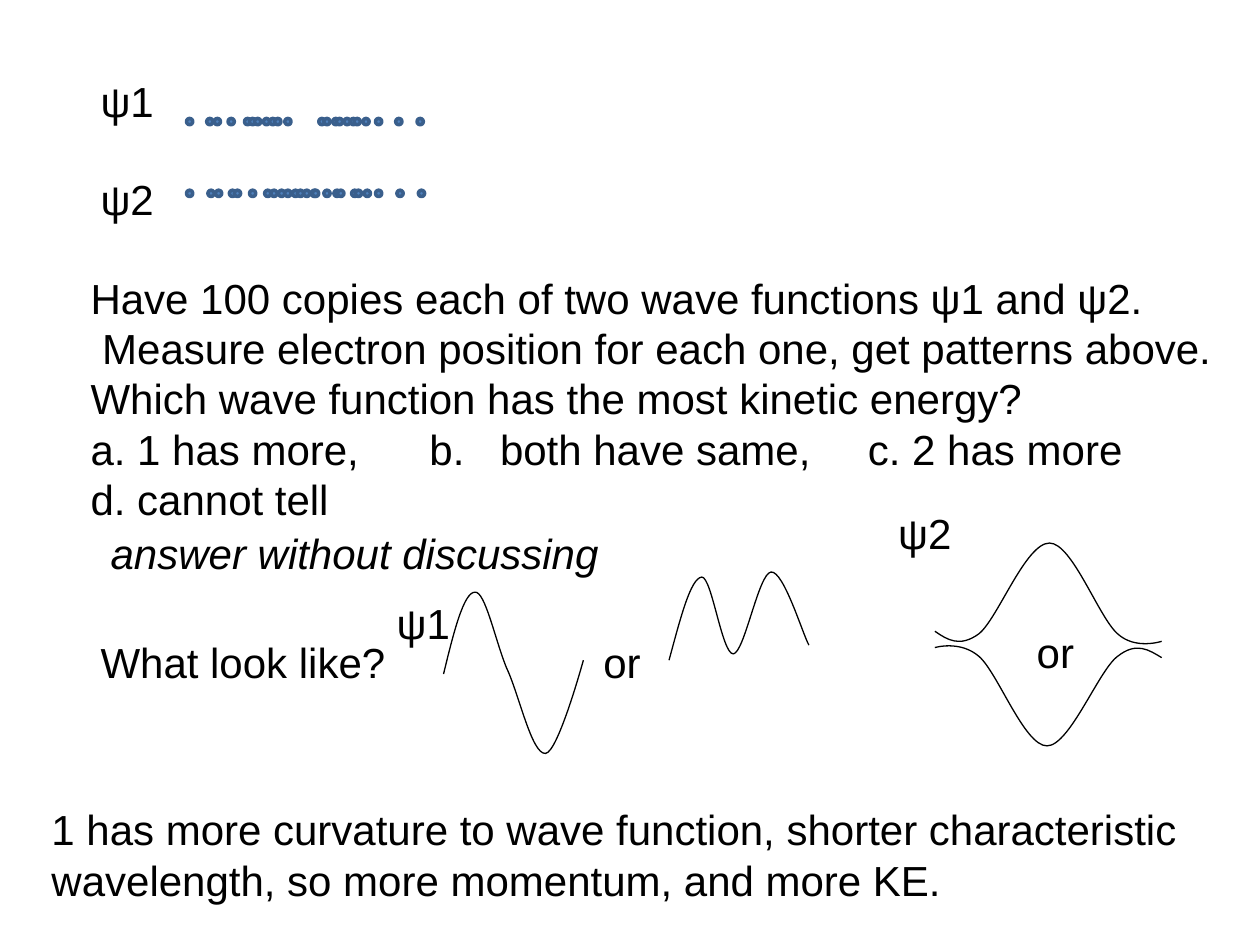
from lxml import etree
from pptx import Presentation
from pptx.dml.color import RGBColor
from pptx.enum import shapes, text
from pptx.oxml.ns import qn
from pptx.util import Inches, Pt

BLACK = RGBColor(0x00, 0x00, 0x00)
DOT_FILL = RGBColor(0x4F, 0x81, 0xBD)
DOT_LINE = RGBColor(0x3A, 0x5F, 0x8C)
DOT_SIZE = 0.05

# Text blocks: left, top, width, height, lines, italic
QUESTION = [
    "Have 100 copies each of two wave functions ψ1 and ψ2.",
    " Measure electron position for each one, get patterns above.",
    "Which wave function has the most kinetic energy?",
    "a. 1 has more,\tb.\tboth have same,\tc. 2 has more",
    "d. cannot tell",
]
ANSWER_TABS = [2.69, 3.25, 6.17]
EXPLANATION = [
    "1 has more curvature to wave function, shorter characteristic",
    "wavelength, so more momentum, and more KE.",
]
BLOCKS = [
    (0.7, 0.55, 0.64, 0.5, ["ψ1"], False),
    (0.7, 1.33, 0.64, 0.5, ["ψ2"], False),
    (0.62, 2.11, 9.11, 2.12, QUESTION, False),
    (0.7, 5, 2.67, 0.5, ["What look like?"], False),
    (0.78, 4.14, 4.12, 0.5, ["answer without discussing"], True),
    (0.31, 6.33, 9.22, 0.91, EXPLANATION, False),
]

# Measured electron positions: row top -> left edges
PATTERNS = {
    0.94: [1.48, 1.64, 1.7, 1.81, 1.94, 1.98, 2.02, 2.09, 2.14, 2.18, 2.26,
           2.53, 2.57, 2.64, 2.67, 2.73, 2.78, 2.81, 2.88, 2.98, 3.14, 3.31],
    1.51: [1.48, 1.65, 1.71, 1.82, 1.86, 1.98, 2.1, 2.15, 2.21, 2.26, 2.32, 2.36,
           2.41, 2.47, 2.48, 2.57, 2.65, 2.68, 2.79, 2.82, 2.89, 2.98, 3.15, 3.32],
}

# Candidate wave functions: a start point, then three Bézier points per segment
PSI1 = {
    "curves": [
        [(3.52, 5.35), (3.6, 5.02), (3.68, 4.7), (3.77, 4.7),
         (3.85, 4.69), (3.93, 5.08), (4.02, 5.3),
         (4.12, 5.51), (4.22, 5.99), (4.33, 5.98),
         (4.43, 5.97), (4.63, 5.24), (4.63, 5.24)],
        [(5.31, 5.24), (5.4, 4.91), (5.48, 4.59), (5.57, 4.58),
         (5.65, 4.58), (5.73, 5.19), (5.82, 5.19),
         (5.91, 5.18), (6.02, 4.55), (6.12, 4.54),
         (6.22, 4.53), (6.37, 5.03), (6.42, 5.12)],
    ],
    "labels": [(4.69, 5, 0.5, 0.5, ["or"], False),
               (3.05, 4.69, 0.64, 0.5, ["ψ1"], False)],
}
PSI2 = {
    "curves": [
        [(7.42, 5.01), (7.52, 5.08), (7.62, 5.14), (7.77, 5.03),
         (7.92, 4.91), (8.14, 4.31), (8.33, 4.31),
         (8.51, 4.31), (8.72, 4.9), (8.87, 5.03),
         (9.01, 5.16), (9.22, 5.09), (9.22, 5.09)],
        [(9.22, 5.22), (9.12, 5.16), (9.02, 5.09), (8.87, 5.21),
         (8.72, 5.32), (8.49, 5.92), (8.31, 5.92),
         (8.13, 5.92), (7.92, 5.34), (7.77, 5.21),
         (7.62, 5.08), (7.42, 5.14), (7.42, 5.14)],
    ],
    "labels": [(7.03, 3.98, 0.64, 0.5, ["ψ2"], False),
               (8.13, 4.92, 0.5, 0.5, ["or"], False)],
}


def add_text(parent, left, top, width, height, lines, italic):
    box = parent.add_textbox(*map(Inches, (left, top, width, height)))
    frame = box.text_frame
    frame.word_wrap = False
    frame.auto_size = text.MSO_AUTO_SIZE.SHAPE_TO_FIT_TEXT
    frame.text = "\n".join(lines)
    for paragraph in frame.paragraphs:
        if "\t" in paragraph.text:
            set_tabs(paragraph, ANSWER_TABS)
        for run in paragraph.runs:
            run.font.name = "Arial"
            run.font.size = Pt(24)
            run.font.color.rgb = BLACK
            if italic:
                run.font.italic = True


def set_tabs(paragraph, stops):
    tabs = etree.SubElement(paragraph._p.get_or_add_pPr(), qn("a:tabLst"))
    for stop in stops:
        etree.SubElement(tabs, qn("a:tab"), pos=str(Inches(stop)), algn="l")


def add_dot(parent, left, top):
    dot = parent.add_shape(shapes.MSO_SHAPE.OVAL, Inches(left), Inches(top),
                           Inches(DOT_SIZE), Inches(DOT_SIZE))
    dot.shadow.inherit = False
    dot.fill.solid()
    dot.fill.fore_color.rgb = DOT_FILL
    dot.line.color.rgb = DOT_LINE
    dot.line.width = Pt(2)


def add_curve(parent, points):
    start, *rest = [(Inches(x), Inches(y)) for x, y in points]
    builder = parent.build_freeform(*start)
    builder.add_line_segments(rest, close=False)
    curve = builder.convert_to_shape()
    curve.shadow.inherit = False
    curve.fill.background()
    curve.line.color.rgb = BLACK
    curve.line.width = Pt(0.75)
    # Turn every three straight segments into one cubic Bézier
    segments = list(curve._element.iter(qn("a:lnTo")))
    for i in range(0, len(segments), 3):
        bezier = etree.SubElement(segments[i].getparent(), qn("a:cubicBezTo"))
        for segment in segments[i:i + 3]:
            bezier.append(segment[0])
            segment.getparent().remove(segment)


prs = Presentation()
prs.slide_width, prs.slide_height = Inches(10), Inches(7.5)
slide = prs.slides.add_slide(prs.slide_layouts[6])

# Question and explanation
for block in BLOCKS:
    add_text(slide.shapes, *block)

# Position patterns
for row_top, lefts in PATTERNS.items():
    for dot_left in lefts:
        add_dot(slide.shapes, dot_left, row_top)

# Sketches of the wave functions
for sketch in (PSI1, PSI2):
    group = slide.shapes.add_group_shape()
    for curve_points in sketch["curves"]:
        add_curve(group.shapes, curve_points)
    for label in sketch["labels"]:
        add_text(group.shapes, *label)

prs.save("out.pptx")
